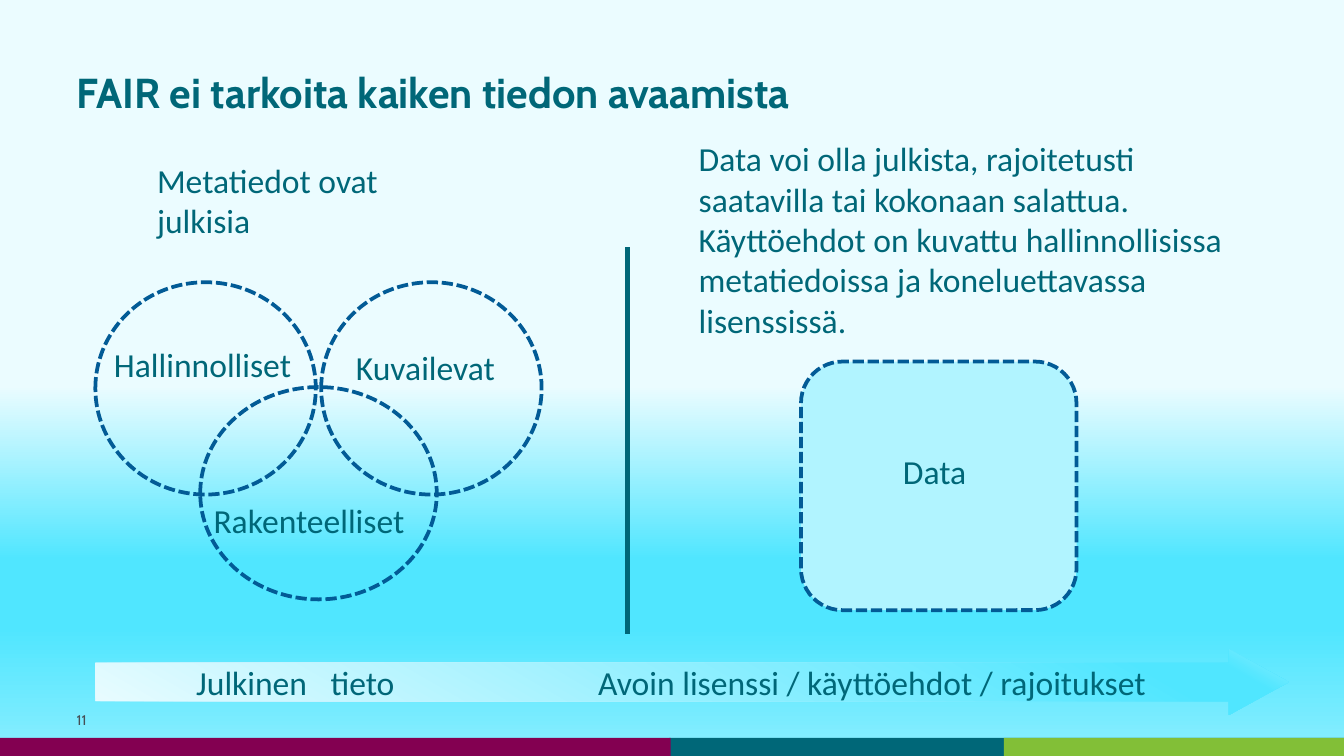
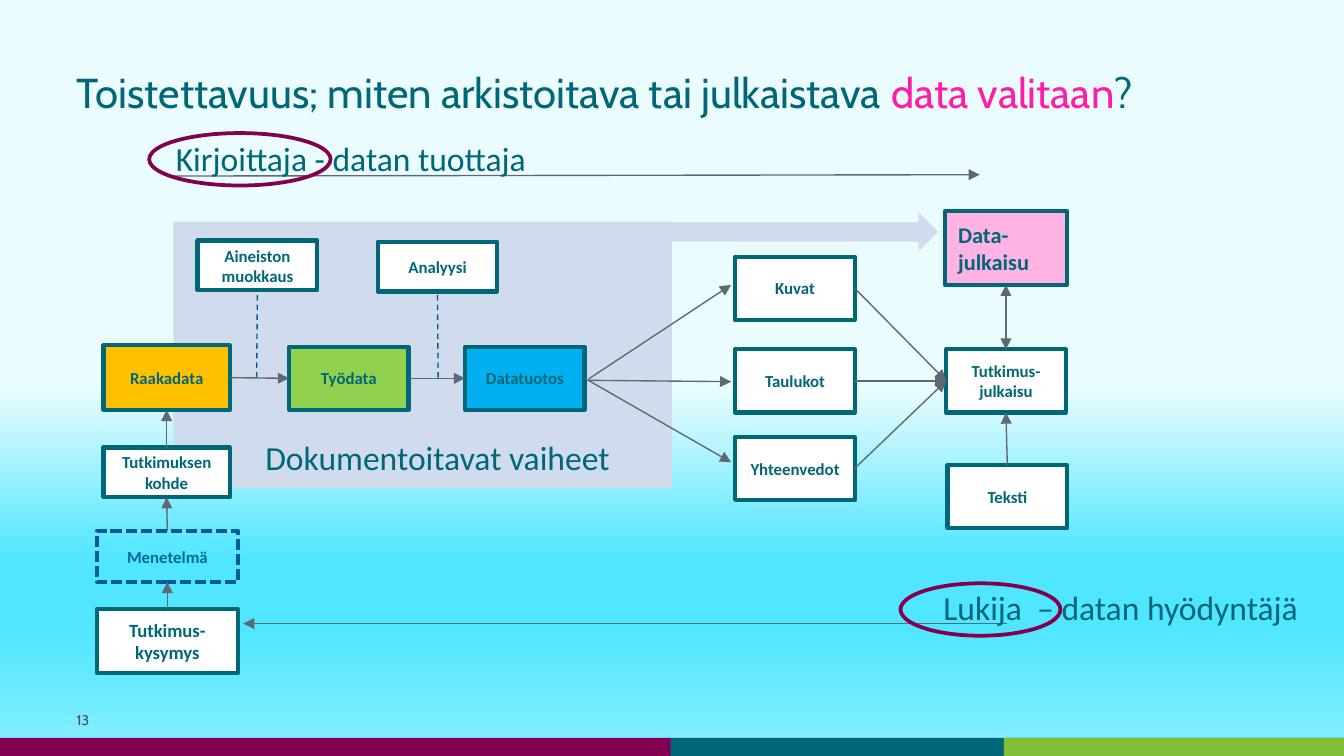
from lxml import etree
from pptx import Presentation
from pptx.dml.color import RGBColor
from pptx.enum.dml import MSO_LINE
from pptx.enum.shapes import MSO_CONNECTOR, MSO_SHAPE
from pptx.enum.text import MSO_ANCHOR, MSO_AUTO_SIZE, PP_ALIGN
from pptx.oxml.ns import qn
from pptx.util import Pt

PX = 9144  # EMU: 100 px to the inch
RECT, OVAL = MSO_SHAPE.RECTANGLE, MSO_SHAPE.OVAL
ROUND, ARROW = MSO_SHAPE.ROUNDED_RECTANGLE, MSO_SHAPE.RIGHT_ARROW
DOTS, DASH = MSO_LINE.SQUARE_DOT, MSO_LINE.DASH
LEFT, MID = PP_ALIGN.LEFT, PP_ALIGN.CENTER
TOP, CENTRE, BASE = MSO_ANCHOR.TOP, MSO_ANCHOR.MIDDLE, MSO_ANCHOR.BOTTOM
UP, WEST, DOWN, EAST = range(4)

COL = {
    "teal": "006778", "green": "82BF37", "plum": "830051", "navy": "025B96",
    "gray": "464F55", "wire": "5E6971", "white": "FFFFFF", "lilac": "D0DCED",
    "gold": "FFC000", "lime": "92D050", "sky": "00B0F0", "rose": "FFB3E2",
    "pink": "FF1CA8", "aqua": "B1F4FF", "blue": "006B99",
    "pale": "EBFCFF", "cyan": "50E6FF", "mist": "8AEEFF",
}


def write(shape, paras, size=18, color="teal", bold=False, font="Calibri",
          align=LEFT, anchor=TOP, inset=(10, 5, 10, 5)):
    """Fill a shape with paragraphs, each a list of (text, colour) runs or a string."""
    frame = shape.text_frame
    frame.word_wrap = True
    frame.auto_size = MSO_AUTO_SIZE.NONE
    frame.vertical_anchor = anchor
    (frame.margin_left, frame.margin_top,
     frame.margin_right, frame.margin_bottom) = [n * PX for n in inset]
    for i, runs in enumerate(paras):
        para = frame.add_paragraph() if i else frame.paragraphs[0]
        para.alignment = align
        for text, tint in [(runs, color)] if isinstance(runs, str) else runs:
            run = para.add_run()
            run.text = text
            run.font.name = font
            run.font.size = Pt(size)
            run.font.bold = bold
            run.font.color.rgb = RGBColor.from_string(COL[tint])


def draw(page, kind, at, fill=None, line=None, width=2, dash=None):
    """Add a preset shape."""
    shape = page.shapes.add_shape(kind, *[n * PX for n in at])
    shape.shadow.inherit = False
    if fill:
        shape.fill.solid()
        shape.fill.fore_color.rgb = RGBColor.from_string(COL[fill])
    else:
        shape.fill.background()
    if line:
        shape.line.color.rgb = RGBColor.from_string(COL[line])
        shape.line.width = Pt(width)
        shape.line.dash_style = dash
    else:
        shape.line.fill.background()
    return shape


prs = Presentation()
prs.slide_width = 1000 * PX
prs.slide_height = prs.slide_width * 9 // 16
layout = prs.slide_layouts[5]
fair, flow = [prs.slides.add_slide(layout) for _ in range(2)]

# Bands shared through the layout
for i, (x, w, tint) in enumerate([(498, 502, "teal"), (747, 253, "green"), (0, 499, "plum")]):
    band = draw(fair, RECT, (x, 549, w, 14), tint)
    band.element.nvSpPr.cNvPr.id = 20 + i
    layout.shapes.element.append(band.element)

# Titles and slide numbers
heads = [
    (fair, [("FAIR ei tarkoita kaiken tiedon avaamista", "teal")], True, "11"),
    (flow, [("Toistettavuus; miten arkistoitava tai julkaistava ", "teal"),
            ("data valitaan", "pink"), ("?", "teal")], False, "13"),
]
for page, runs, bold, num in heads:
    title = page.shapes.title
    title.left, title.top, title.width, title.height = [n * PX for n in (50, 21, 847, 94)]
    write(title, [runs], 22.4, bold=bold, font="Cabin", anchor=CENTRE, inset=(7, 4, 7, 4))
    foot = page.shapes.add_textbox(*[n * PX for n in (50, 523, 71, 26)])
    write(foot, [num], 7.5, "gray", font="Cabin", anchor=CENTRE, inset=(7, 4, 7, 4))

# FAIR: metadata circles, data box, licence arrow
for at in [(239, 210, 164, 158), (71, 210, 164, 158), (149, 288, 176, 158)]:
    draw(fair, OVAL, at, line="navy", dash=DOTS)
draw(fair, ROUND, (596, 269, 205, 185), "aqua", "navy", dash=DOTS)

scale = draw(fair, ARROW, (71, 483, 888, 49))
scale.adjustments[0], scale.adjustments[1] = 0.58, 0.91
scale.fill.gradient()
para = scale.text_frame.paragraphs[0]
tabs = etree.SubElement(para._p.get_or_add_pPr(), qn("a:tabLst"))
for stop in (100, 299):
    etree.SubElement(tabs, qn("a:tab"), pos=str(stop * PX), algn="l")
write(scale, ["Julkinen\ttieto\tAvoin lisenssi / käyttöehdot / rajoitukset"],
      anchor=CENTRE, inset=(75, 5, 10, 5))

# Flow: documented stages
stage = draw(flow, RECT, (129, 165, 371, 198), "lilac")
write(stage, ["Dokumentoitavat vaiheet"], align=MID, anchor=BASE, inset=(32, 5, 10, 8))
draw(flow, ARROW, (499, 158, 199, 29), "lilac")

# Flow: boxes
boxes = {}
for text, at, fill, size in [
    ("Tutkimus-kysymys", (72, 453, 105, 48), "white", 10),
    ("Menetelmä", (72, 395, 105, 38), None, 9),
    ("Tutkimuksen kohde", (77, 333, 94, 37), "white", 9),
    ("Raakadata", (77, 257, 94, 48), "gold", 9),
    ("Työdata", (215, 258, 89, 47), "lime", 9),
    ("Aineiston muokkaus", (147, 179, 89, 37), "white", 9),
    ("Datatuotos", (346, 258, 89, 47), "sky", 9),
    ("Analyysi", (281, 180, 89, 37), "white", 9),
    ("Kuvat", (547, 191, 89, 47), "white", 9),
    ("Taulukot", (547, 260, 89, 47), "white", 9),
    ("Yhteenvedot", (547, 325, 89, 47), "white", 9),
    ("Tutkimus-julkaisu", (704, 260, 89, 47), "white", 9),
    ("Teksti", (705, 346, 89, 47), "white", 9),
    ("Data-julkaisu", (703, 157, 91, 55), "rose", 12),
]:
    if fill:
        box = draw(flow, RECT, at, fill, "teal", 2 if size == 10 else 2.25)
    else:
        box = draw(flow, RECT, at, line="navy", dash=DOTS)
    write(box, [text], size, "teal" if fill else "blue", True,
          align=LEFT if size == 12 else MID, anchor=CENTRE)
    boxes[text] = box

# Lines: an end is a point or a (box, side) pair
wires = [
    (fair, (467, 184), (467, 472), "teal", 3, None, ()),
    (flow, (191, 281), ("Aineiston muokkaus", DOWN), "navy", 0.75, DASH, ()),
    (flow, (326, 281), ("Analyysi", DOWN), "navy", 0.75, DASH, ()),
]
links = [
    (("Tutkimus-kysymys", UP), ("Menetelmä", DOWN)),
    (("Menetelmä", UP), ("Tutkimuksen kohde", DOWN)),
    (("Tutkimuksen kohde", UP), ("Raakadata", DOWN)),
    (("Raakadata", EAST), ("Työdata", WEST)),
    (("Työdata", EAST), ("Datatuotos", WEST)),
    (("Teksti", UP), ("Tutkimus-julkaisu", DOWN)),
    ((749, 464), (181, 464)),
    ((129, 131), (729, 130)),
]
for name, start, y in [("Kuvat", (438, 282), 212), ("Taulukot", (438, 283), 284),
                       ("Yhteenvedot", (436, 282), 344)]:
    links.append((start, (544, y)))
    links.append(((name, EAST), ("Tutkimus-julkaisu", WEST)))
wires += [(flow, a, b, "wire", 0.75, None, ("tailEnd",)) for a, b in links]
wires.append((flow, ("Data-julkaisu", DOWN), ("Tutkimus-julkaisu", UP),
              "wire", 0.75, None, ("headEnd", "tailEnd")))

for page, start, end, tint, width, dash, tips in wires:
    points = [(0, 0) if isinstance(e[0], str) else e for e in (start, end)]
    wire = page.shapes.add_connector(
        MSO_CONNECTOR.STRAIGHT, *[n * PX for point in points for n in point])
    for spot, join in ((start, wire.begin_connect), (end, wire.end_connect)):
        if isinstance(spot[0], str):
            join(boxes[spot[0]], spot[1])
    wire.line.color.rgb = RGBColor.from_string(COL[tint])
    wire.line.width = Pt(width)
    wire.line.dash_style = dash
    for tip in tips:
        etree.SubElement(wire.line._get_or_add_ln(), qn("a:" + tip), type="triangle")
    etree.SubElement(wire.element.spPr, qn("a:effectLst"))

# Free text
for page, at, paras in [
    (fair, (75, 251, 163, 54), ["Hallinnolliset"]),
    (fair, (255, 253, 131, 40), ["Kuvailevat"]),
    (fair, (149, 367, 171, 40), ["Rakenteelliset"]),
    (fair, (107, 114, 255, 71), ["Metatiedot ovat julkisia"]),
    (fair, (510, 98, 442, 162), [
        "Data voi olla julkista, rajoitetusti saatavilla tai kokonaan salattua.",
        "Käyttöehdot on kuvattu hallinnollisissa metatiedoissa ja "
        "koneluettavassa lisenssissä."]),
    (fair, (662, 331, 71, 40), ["Data"]),
    (flow, (692, 432, 311, 40), ["Lukija  – datan hyödyntäjä"]),
    (flow, (121, 98, 317, 40), ["Kirjoittaja - datan tuottaja"]),
]:
    write(page.shapes.add_textbox(*[n * PX for n in at]), paras)

# Rings around the two roles
for at in [(111, 99, 135, 39), (670, 434, 119, 39)]:
    draw(flow, OVAL, at, line="plum")

# Gradients of the background and the licence arrow
prs.slide_master.background.fill.gradient()
for owner, stops, angle in [(prs.slide_master, (51, 74, 83, 100), 90),
                            (scale, (0, 87, 93, 100), 300)]:
    grad = next(owner.element.iter(qn("a:gradFill")))
    grad.clear()
    row = etree.SubElement(grad, qn("a:gsLst"))
    for pos, tint in zip(stops, ("pale", "cyan", "cyan", "mist")):
        stop = etree.SubElement(row, qn("a:gs"), pos=str(pos * 1000))
        etree.SubElement(stop, qn("a:srgbClr"), val=COL[tint])
    etree.SubElement(grad, qn("a:lin"), ang=str(angle * 60000), scaled="0")

prs.save("out.pptx")
